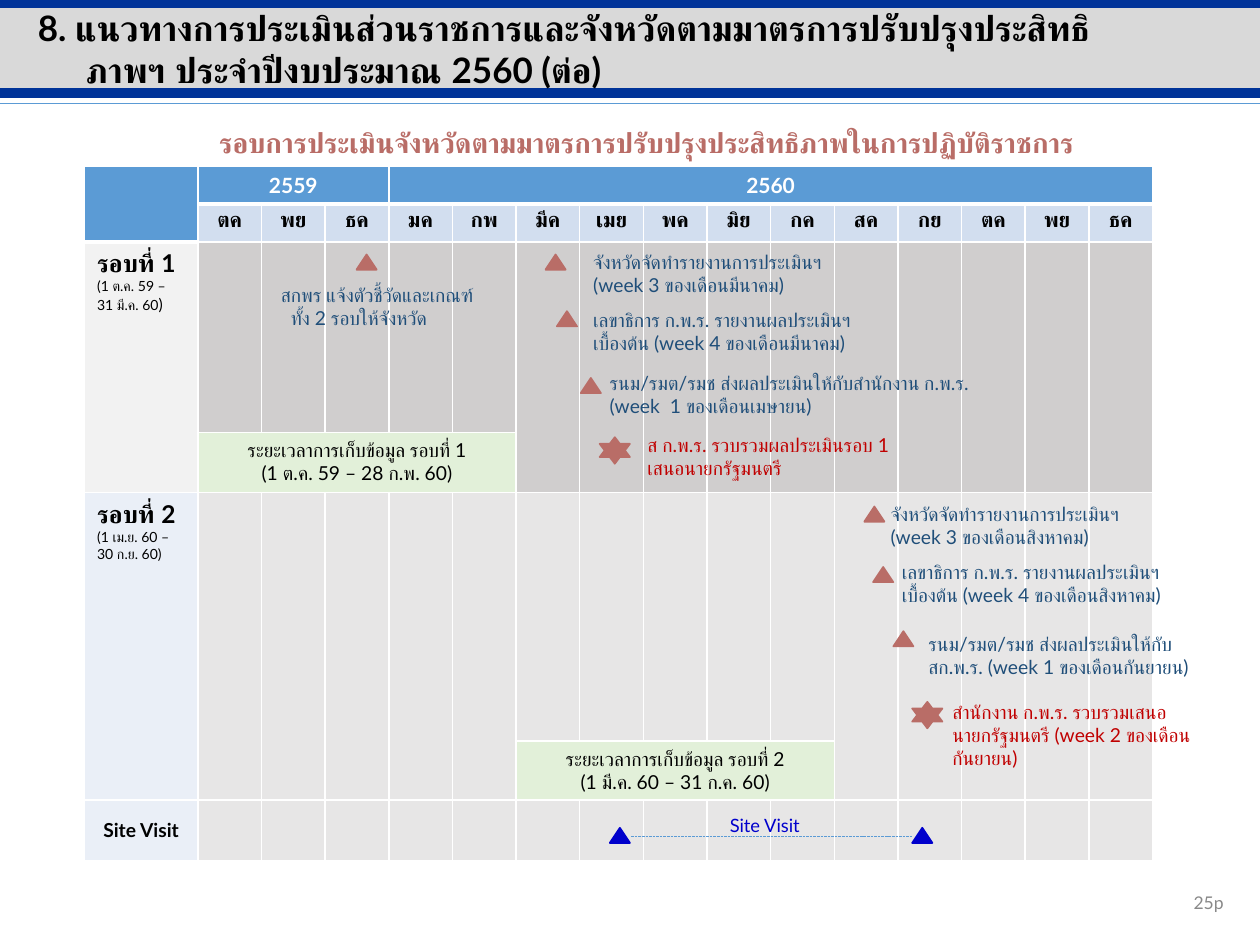
import pptx
import pptx.dml.color
import pptx.enum.dml
import pptx.enum.shapes
import pptx.enum.text
import pptx.oxml
import pptx.oxml.ns
import pptx.util
from dataclasses import dataclass
from pptx.util import Inches

COLORS = {
    "navy": "003399", "band": "D9D9D9", "blue": "5B9BD5", "month": "D2DEEF",
    "rose": "B96D67", "ink": "1F4E79", "red": "C00000", "visit": "0000CC",
    "black": "000000", "white": "FFFFFF", "number": "898989",
    "round 1": "D0CECE", "round 2": "E7E6E6", "period": "E2F0D9",
    "label 1": "F2F2F2", "label 2": "EAEFF7",
}
ALIGN = pptx.enum.text.PP_ALIGN
ANCHOR = pptx.enum.text.MSO_ANCHOR
SHAPE = pptx.enum.shapes.MSO_SHAPE
MONTHS = "ตค พย ธค มค กพ มีค เมย พค มิย กค สค กย ตค พย ธค".split()
LABEL_WIDTH = 0.9
ROW_HEIGHTS = [0.3, 0.3, 1.51, 0.48, 1.97, 0.47, 0.48]

# Marker position, text position and width (from the round's corner), text
ROUND_1 = [
    (2.16, 0.10, 1.46, 0.28, 2.05, "สกพร แจ้งตัวชี้วัดและเกณฑ์\vทั้ง 2 รอบให้จังหวัด"),
    (3.66, 0.10, 3.94, 0.02, 2.63, "จังหวัดจัดทำรายงานการประเมินฯ\v(week 3 ของเดือนมีนาคม)"),
    (3.75, 0.55, 3.94, 0.48, 2.56, "เลขาธิการ ก.พ.ร. รายงานผลประเมินฯ\vเบื้องต้น (week 4 ของเดือนมีนาคม)"),
    (3.94, 1.08, 4.07, 0.98, 3.46, "รนม/รมต/รมช ส่งผลประเมินให้กับสำนักงาน ก.พ.ร. (week  1 ของเดือนเมษายน)"),
    (4.09, 1.55, 4.37, 1.47, 2.33, "ส ก.พ.ร. รวบรวมผลประเมินรอบ 1\nเสนอนายกรัฐมนตรี"),
]
ROUND_2 = [
    (6.19, 0.11, 6.30, 0.03, 2.82, "จังหวัดจัดทำรายงานการประเมินฯ\v(week 3 ของเดือนสิงหาคม)"),
    (6.26, 0.59, 6.39, 0.49, 2.90, "เลขาธิการ ก.พ.ร. รายงานผลประเมินฯ\vเบื้องต้น (week 4 ของเดือนสิงหาคม)"),
    (6.42, 1.10, 6.60, 1.06, 2.70, "รนม/รมต/รมช ส่งผลประเมินให้กับ\vสก.พ.ร. (week 1 ของเดือนกันยายน)"),
    (6.57, 1.66, 6.79, 1.60, 2.50, "สำนักงาน ก.พ.ร. รวบรวมเสนอ\vนายกรัฐมนตรี (week 2 ของเดือน\vกันยายน)"),
]


@dataclass
class Box:
    left: float
    top: float
    width: float
    height: float

    def inside(self, dx, dy, width, height):
        return Box(self.left + dx, self.top + dy, width, height)

    def lengths(self):
        return [Inches(v) for v in (self.left, self.top, self.width, self.height)]


def rgb(color):
    return pptx.dml.color.RGBColor.from_string(COLORS[color])


def style_paragraph(paragraph, size, color, bold=False, align=ALIGN.LEFT):
    paragraph.alignment = align
    values = {"size": pptx.util.Pt(size), "bold": bold, "name": "Lato"}
    for run in paragraph.runs:
        for attribute, value in values.items():
            setattr(run.font, attribute, value)
        run.font.color.rgb = rgb(color)


def write(frame, text, size, color, bold=False, align=ALIGN.LEFT):
    """Newlines part paragraphs; vertical tabs break lines."""
    frame.text = text
    for paragraph in frame.paragraphs:
        style_paragraph(paragraph, size, color, bold, align)


def hang(paragraph, depth):
    properties = paragraph._p.get_or_add_pPr()
    properties.set("marL", str(Inches(depth)))
    properties.set("indent", str(-Inches(depth)))


def add_text(slide, box, *format_values):
    frame = slide.shapes.add_textbox(*box.lengths()).text_frame
    frame.word_wrap = True
    write(frame, *format_values)
    return frame


def add_rule(slide, start, end, y, color, weight, shadow=""):
    rule = slide.shapes.add_connector(
        pptx.enum.shapes.MSO_CONNECTOR.STRAIGHT,
        Inches(start), Inches(y), Inches(end), Inches(y))
    rule.line.color.rgb = rgb(color)
    rule.line.width = pptx.util.Pt(weight)
    rule._element.spPr.append(pptx.oxml.parse_xml(
        f'<a:effectLst {pptx.oxml.ns.nsdecls("a")}>{shadow}</a:effectLst>'))
    return rule


def add_filled(slide, kind, box, color, outlined=True):
    shape = slide.shapes.add_shape(kind, *box.lengths())
    shape.shadow.inherit = False
    shape.fill.solid()
    shape.fill.fore_color.rgb = rgb(color)
    if outlined:
        shape.line.color.rgb = rgb(color)
        shape.line.width = pptx.util.Pt(1)
    else:
        shape.line.fill.background()


def add_header(slide, box):
    add_filled(slide, SHAPE.RECTANGLE, box.inside(0, 0.05, box.width, 0.68), "band", False)
    for y in (0.74, 0.02):
        add_rule(slide, box.left, box.left + box.width, box.top + y, "navy", 6)
    shadow = ('<a:outerShdw blurRad="50800" dist="38100" dir="5400000">'
              '<a:srgbClr val="000000"><a:alpha val="40000"/></a:srgbClr></a:outerShdw>')
    add_rule(slide, box.left, box.left + box.width, box.top + 0.82, "blue", 0.5, shadow)

    title = slide.shapes.title
    slide.shapes._spTree.append(title._element)  # in front of the band
    title.left, title.top, title.width, title.height = box.inside(0.2, 0, 9.05, 1.11).lengths()
    frame = title.text_frame
    frame.word_wrap = True
    frame.auto_size = pptx.enum.text.MSO_AUTO_SIZE.NONE
    frame.vertical_anchor = ANCHOR.TOP
    write(frame, "8. แนวทางการประเมินส่วนราชการและจังหวัดตามมาตรการปรับปรุงประสิทธิภาพฯ "
                 "ประจำปีงบประมาณ 2560 (ต่อ)", 20, "black", True)
    hang(frame.paragraphs[0], 0.38)


def set_borders(cell, row, column):
    thick = {"T": row == 1 or (row == 2 and column == 0),
             "B": row == 0 or (row == 1 and column == 0)}
    for position, side in enumerate("LRTB"):
        weight = pptx.util.Pt(3 if thick.get(side) else 1)
        cell._tc.get_or_add_tcPr().insert(position, pptx.oxml.parse_xml(
            f'<a:ln{side} {pptx.oxml.ns.nsdecls("a")} w="{weight}"><a:solidFill>'
            f'<a:srgbClr val="{COLORS["white"]}"/></a:solidFill></a:ln{side}>'))


def cell_color(row, column):
    if row < 2:
        return "month" if row and column else "blue"
    if column == 0:
        return "label 1" if row < 4 else "label 2"
    if (row == 3 and column <= 5) or (row == 5 and 6 <= column <= 10):
        return "period"
    return "round 1" if row < 4 else "round 2"


def add_schedule(slide, box):
    rows, columns = len(ROW_HEIGHTS), len(MONTHS) + 1
    table = slide.shapes.add_table(rows, columns, *box.lengths()).table
    for row, height in zip(table.rows, ROW_HEIGHTS):
        row.height = Inches(height)
    for index, column in enumerate(table.columns):
        column.width = Inches((box.width - LABEL_WIDTH) / len(MONTHS) if index else LABEL_WIDTH)
    for row in range(rows):
        for column in range(columns):
            cell = table.cell(row, column)
            cell.fill.solid()
            cell.fill.fore_color.rgb = rgb(cell_color(row, column))
            set_borders(cell, row, column)
            cell.text_frame.paragraphs[0]._p.get_or_add_endParaRPr().set("sz", "800")

    spans = [(0, 0, 1, 0), (0, 1, 0, 3), (0, 4, 0, 15), (3, 1, 3, 5), (5, 6, 5, 10)]
    spans += [(2, c, 3, c) for c in (0, *range(6, columns))]
    spans += [(4, c, 5, c) for c in (*range(6), *range(11, columns))]
    for top, left, bottom, right in spans:
        table.cell(top, left).merge(table.cell(bottom, right))

    centred = [(0, 1, "2559", 12, "white", True), (0, 4, "2560", 12, "white", True),
               (3, 1, "ระยะเวลาการเก็บข้อมูล รอบที่ 1\n(1 ต.ค. 59 – 28 ก.พ. 60)", 11, "black", False),
               (5, 6, "ระยะเวลาการเก็บข้อมูล รอบที่ 2\n(1 มี.ค. 60 – 31 ก.ค. 60)", 11, "black", False),
               (6, 0, "Site Visit", 11, "black", True)]
    centred += [(1, c, month, 12, "black", True) for c, month in enumerate(MONTHS, 1)]
    for row, column, *format_values in centred:
        write(table.cell(row, column).text_frame, *format_values, ALIGN.CENTER)
    table.cell(6, 0).vertical_anchor = ANCHOR.MIDDLE

    for row, label, bracket_size in ((2, "รอบที่ 1\n(1 ต.ค. 59 – 31 มี.ค. 60", 9),
                                     (4, "รอบที่ 2\n(1 เม.ย. 60 – 30 ก.ย. 60", 8)):
        frame = table.cell(row, 0).text_frame
        frame.text = label
        name, dates = frame.paragraphs
        bracket = dates.add_run()
        bracket.text = ")"
        style_paragraph(name, 14, "black", True)
        style_paragraph(dates, 8, "black")
        bracket.font.size = pptx.util.Pt(bracket_size)


def add_triangle(slide, box, dx, dy, color):
    add_filled(slide, SHAPE.FLOWCHART_EXTRACT, box.inside(dx, dy, 0.16, 0.12), color)


def add_milestones(slide, box, milestones):
    """The last milestone, sent to the prime minister, gets a star."""
    for milestone in milestones:
        marker_x, marker_y, text_x, text_y, width, text = milestone
        final = milestone is milestones[-1]
        if final:
            add_filled(slide, SHAPE.STAR_6_POINT, box.inside(marker_x, marker_y, 0.24, 0.21), "rose")
        else:
            add_triangle(slide, box, marker_x, marker_y, "rose")
        height = 0.66 if text.count("\v") == 2 else 0.47
        frame = add_text(slide, box.inside(text_x, text_y, width, height),
                         text, 11, "red" if final else "ink")
        if milestone is ROUND_1[0]:
            hang(frame.paragraphs[0], 0.08)


def add_site_visit(slide, box):
    for x in (4.17, 6.57):
        add_triangle(slide, box, x, 0.22, "visit")
    period = add_rule(slide, box.left + 4.34, box.left + 6.57, box.top + 0.29, "blue", 0.5)
    period.line.dash_style = pptx.enum.dml.MSO_LINE.SQUARE_DOT
    add_text(slide, box.inside(4.89, 0.06, 1.02, 0.28), "Site Visit", 10.5, "visit", False, ALIGN.CENTER)


def main():
    deck = pptx.Presentation()
    deck.slide_width, deck.slide_height = Inches(10), Inches(7.5)
    slide = deck.slides.add_slide(deck.slide_layouts[5])
    add_header(slide, Box(0, 0, 10, 0.82))
    add_text(slide, Box(0.64, 0.95, 8.98, 0.37),
             "รอบการประเมินจังหวัดตามมาตรการปรับปรุงประสิทธิภาพในการปฏิบัติราชการ",
             16, "rose", True, ALIGN.CENTER)
    schedule = Box(0.67, 1.32, 8.48, sum(ROW_HEIGHTS))
    add_schedule(slide, schedule)
    for first, last, fill_row, content in ((2, 4, add_milestones, [ROUND_1]),
                                           (4, 6, add_milestones, [ROUND_2]),
                                           (6, 7, add_site_visit, [])):
        row_box = schedule.inside(0, sum(ROW_HEIGHTS[:first]), schedule.width,
                                  sum(ROW_HEIGHTS[first:last]))
        fill_row(slide, row_box, *content)
    number = add_text(slide, Box(7.56, 6.96, 2.25, 0.4), "25p", 10, "number", False, ALIGN.RIGHT)
    number.vertical_anchor = ANCHOR.MIDDLE
    deck.save("out.pptx")


if __name__ == "__main__":
    main()
